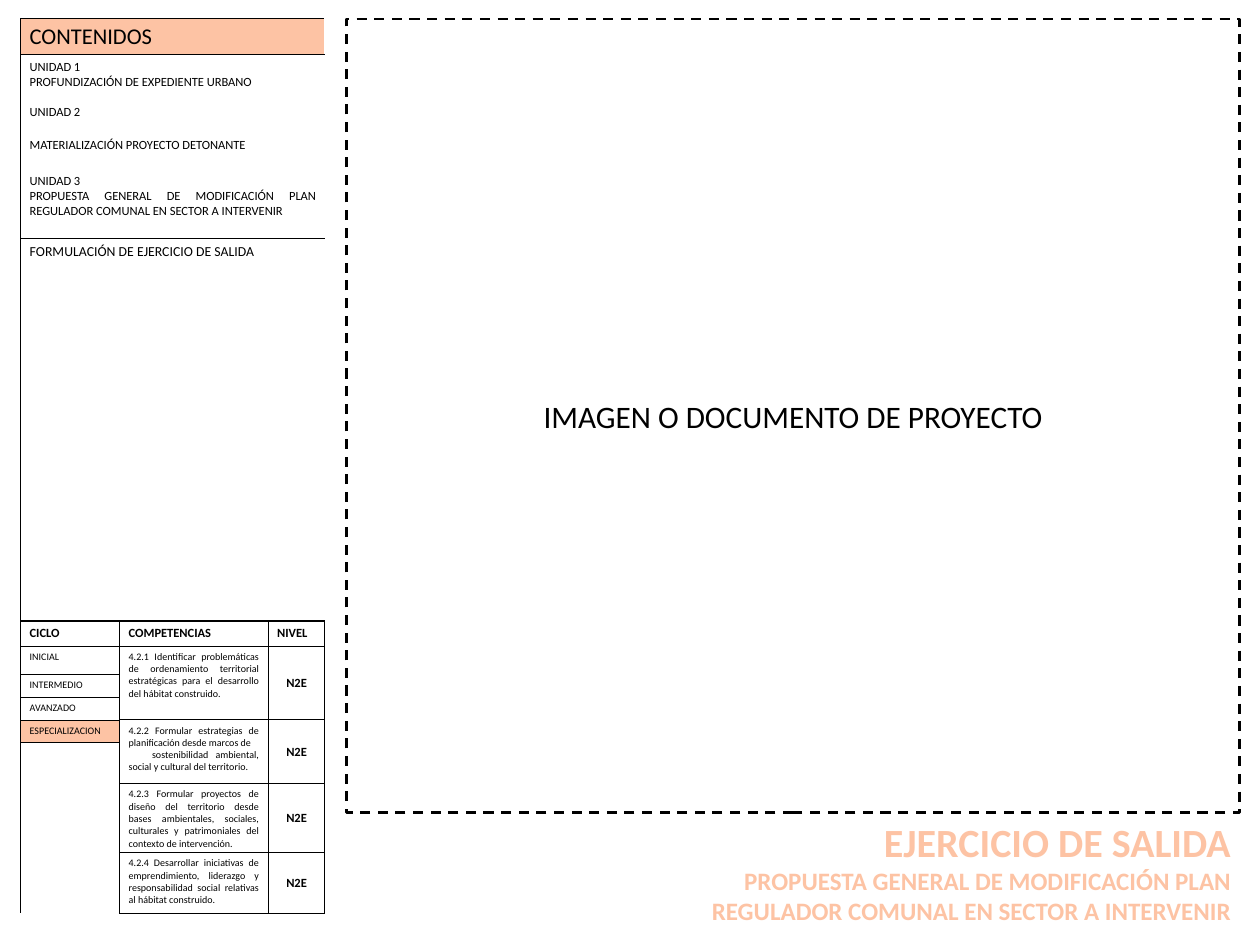
from dataclasses import dataclass

from pptx import Presentation
from pptx.dml.color import RGBColor as RGB
from pptx.enum.dml import MSO_LINE_DASH_STYLE as Dash
from pptx.enum.shapes import MSO_SHAPE as Shape
from pptx.enum.text import MSO_ANCHOR as Anchor, MSO_AUTO_SIZE as AutoSize, PP_ALIGN as Align
from pptx.oxml import parse_xml
from pptx.oxml.ns import nsdecls
from pptx.util import Inches, Pt


@dataclass(frozen=True)
class Theme:
    font: str = "Calibri"
    ink: str = "000000"
    accent: str = "FDC3A4"
    title: int = 32
    frame: int = 25
    subtitle: int = 20
    heading: int = 18
    task: int = 11
    body: int = 10
    small: int = 8
    line: float = 1
    thin: float = 0.5


THEME = Theme()

# Table grid and its texts
COLS = [1.1, 1.65, 0.63]
ROWS = [0.39, 2.04, 4.25, 0.28, 0.31, 0.26, 0.25, 0.25, 0.46, 0.68, 0.68]
PLAN = "PROPUESTA GENERAL DE MODIFICACIÓN PLAN REGULADOR COMUNAL EN SECTOR A INTERVENIR"
UNITS = [  # text, space before in points
    ("UNIDAD 1", 0),
    ("PROFUNDIZACIÓN DE EXPEDIENTE URBANO", 0),
    ("UNIDAD 2", 12),
    ("MATERIALIZACIÓN PROYECTO DETONANTE", 14),
    ("UNIDAD 3", 16.5),
    (PLAN, 0),
]
CYCLES = ["INICIAL", "INTERMEDIO", "AVANZADO", "ESPECIALIZACION"]
CURRENT_CYCLE = "ESPECIALIZACION"
SKILLS = [  # row, rows spanned, paragraphs as (text, first-line indent)
    (4, 3, [("4.2.1 Identificar problemáticas de ordenamiento territorial "
             "estratégicas para el desarrollo del hábitat construido.", 0)]),
    (7, 2, [("4.2.2 Formular estrategias de planificación desde marcos de", 0),
            ("sostenibilidad ambiental, social y cultural del territorio.", 0.26)]),
    (9, 1, [("4.2.3 Formular proyectos de diseño del territorio desde bases ambientales, "
             "sociales, culturales y patrimoniales del contexto de intervención.", 0)]),
    (10, 1, [("4.2.4 Desarrollar iniciativas de emprendimiento, liderazgo y "
              "responsabilidad social relativas al hábitat construido.", 0)]),
]


def write(tf, text, size, color=THEME.ink, bold=False, align=Align.JUSTIFY, before=0, indent=0):
    """Add a paragraph to a text frame, using its first one while empty."""
    p = tf.paragraphs[0] if not tf.text else tf.add_paragraph()
    p.alignment, p.space_before = align, Pt(before)
    if indent:
        p._p.get_or_add_pPr().set("indent", str(Inches(indent)))
    r = p.add_run()
    r.text = text
    f = r.font
    f.name, f.size, f.bold = THEME.font, Pt(size), bold
    f.color.rgb = RGB.from_string(color)


class SlideBuilder:
    def __init__(self, prs, theme):
        self.theme = theme
        self.slide = prs.slides.add_slide(prs.slide_layouts[5])

    def title(self, box, lines):
        sp = self.slide.shapes.title
        sp.left, sp.top, sp.width, sp.height = map(Inches, box)
        tf = sp.text_frame
        tf.word_wrap, tf.auto_size = True, AutoSize.SHAPE_TO_FIT_TEXT
        tf.vertical_anchor = Anchor.TOP
        for text, size in lines:
            write(tf, text, size, self.theme.accent, bold=True, align=Align.RIGHT)

    def dashed_frame(self, box, text):
        sp = self.slide.shapes.add_shape(Shape.RECTANGLE, *map(Inches, box))
        sp.shadow.inherit = False
        sp.fill.background()
        sp.line.color.rgb = RGB.from_string(self.theme.ink)
        sp.line.width, sp.line.dash_style = Pt(2), Dash.DASH
        sp.text_frame.vertical_anchor = Anchor.MIDDLE
        write(sp.text_frame, text, self.theme.frame, align=Align.CENTER)

    def table(self, left, top, cols, rows):
        frame = self.slide.shapes.add_table(
            len(rows), len(cols), *map(Inches, (left, top, sum(cols), sum(rows))))
        tbl = frame.table
        tbl.first_row = tbl.horz_banding = False
        for col, width in zip(tbl.columns, cols):
            col.width = Inches(width)
        for row, height in zip(tbl.rows, rows):
            row.height = Inches(height)
        return tbl

    def border(self, cell, side, width):
        cell._tc.get_or_add_tcPr().append(parse_xml(
            f'<a:ln{side} {nsdecls("a")} w="{Pt(width)}"><a:solidFill>'
            f'<a:srgbClr val="{self.theme.ink}"/></a:solidFill></a:ln{side}>'))

    def cell(self, tbl, row, col, rowspan=1, colspan=1, fill=None,
             anchor=Anchor.TOP, thin_top=False, thin_bottom=False):
        """Merge a block, draw its outer borders and return its text frame."""
        t = self.theme
        last_row, last_col = row + rowspan - 1, col + colspan - 1
        origin = tbl.cell(row, col)
        if rowspan * colspan > 1:
            origin.merge(tbl.cell(last_row, last_col))
        for r in range(row, last_row + 1):
            for c in range(col, last_col + 1):
                part = tbl.cell(r, c)
                edges = [("L", c == col, False), ("R", c == last_col, False),
                         ("T", r == row, thin_top), ("B", r == last_row, thin_bottom)]
                for side, outer, thin in edges:
                    if outer:
                        self.border(part, side, t.thin if thin else t.line)
                if fill:
                    part.fill.solid()
                    part.fill.fore_color.rgb = RGB.from_string(fill)
                else:
                    part.fill.background()
        origin.vertical_anchor = anchor
        return origin.text_frame


def main():
    prs = Presentation()
    prs.slide_width, prs.slide_height = Inches(14), Inches(10.5)
    t = THEME
    s = SlideBuilder(prs, t)

    # Title and project frame
    s.title((7, 9.03, 6.78, 1.31), [("EJERCICIO DE SALIDA", t.title), (PLAN, t.subtitle)])
    s.dashed_frame((3.85, 0.21, 9.92, 8.82), "IMAGEN O DOCUMENTO DE PROYECTO")

    # Contents: heading, units and task across the full width
    tbl = s.table(0.23, 0.21, COLS, ROWS)
    write(s.cell(tbl, 0, 0, colspan=3, fill=t.accent), "CONTENIDOS", t.heading)
    tf = s.cell(tbl, 1, 0, colspan=3, thin_bottom=True)
    for text, before in UNITS:
        write(tf, text, t.body, before=before)
    write(s.cell(tbl, 2, 0, colspan=3, thin_top=True),
          "FORMULACIÓN DE EJERCICIO DE SALIDA", t.task)

    # Column headings
    for col, text in enumerate(["CICLO", "COMPETENCIAS", "NIVEL"]):
        write(s.cell(tbl, 3, col), text, t.body, bold=True)

    # Cycles, with the current one filled, and the empty block below
    for i, text in enumerate(CYCLES):
        fill = t.accent if text == CURRENT_CYCLE else None
        tf = s.cell(tbl, 4 + i, 0, fill=fill, thin_top=i > 0, thin_bottom=True)
        write(tf, text, t.small)
    s.cell(tbl, 8, 0, rowspan=3, thin_top=True, thin_bottom=True)

    # Skills and their level
    for row, span, paragraphs in SKILLS:
        tf = s.cell(tbl, row, 1, rowspan=span)
        for text, indent in paragraphs:
            write(tf, text, t.small, indent=indent)
        level = s.cell(tbl, row, 2, rowspan=span, anchor=Anchor.MIDDLE)
        write(level, "N2E", t.body, bold=True, align=Align.CENTER)

    prs.save("out.pptx")


if __name__ == "__main__":
    main()
